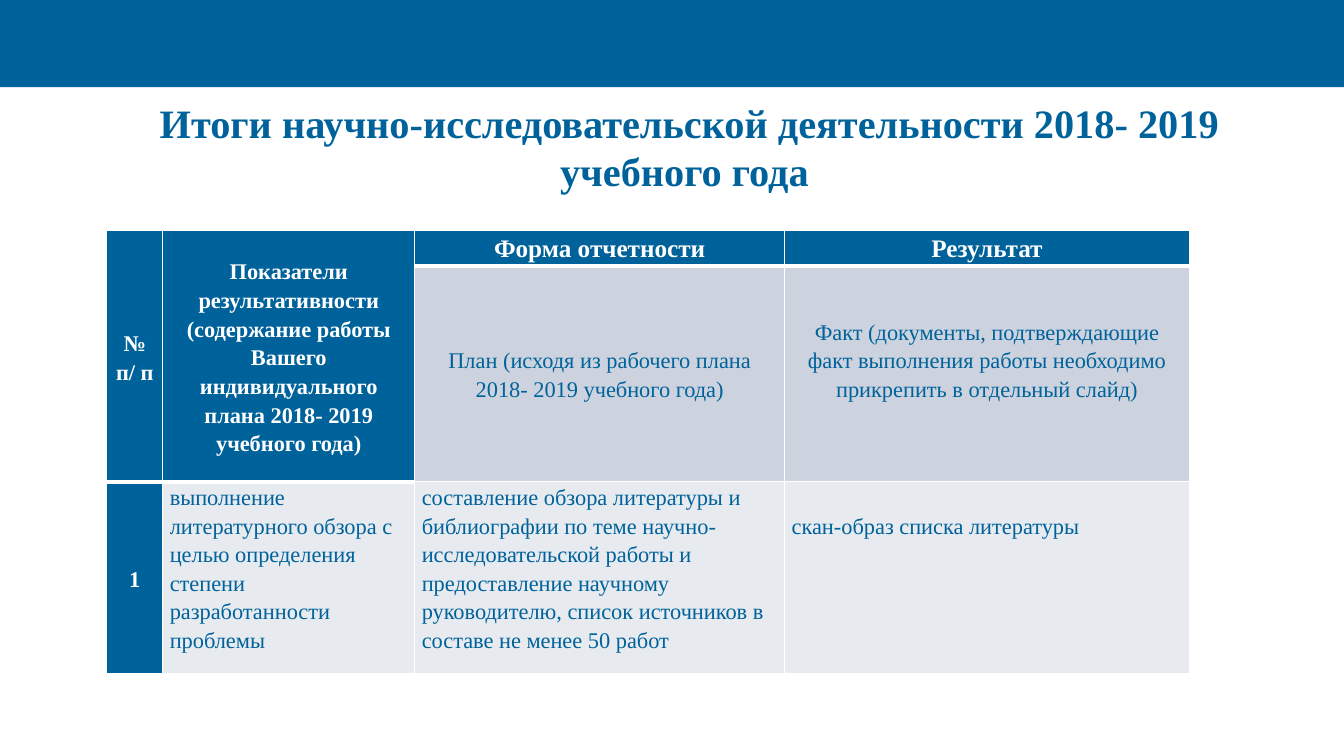
from dataclasses import dataclass
from typing import Optional

from lxml.etree import SubElement
from pptx import Presentation
from pptx.dml.color import RGBColor
from pptx.enum.shapes import MSO_SHAPE
from pptx.enum.text import MSO_ANCHOR, PP_ALIGN
from pptx.oxml.ns import qn
from pptx.slide import Slide
from pptx.table import _Cell
from pptx.text.text import _Paragraph
from pptx.util import Inches, Pt

GRID_STEP = 0.1
SLIDE_COLUMNS, SLIDE_ROWS = 133.33, 75


@dataclass(frozen=True)
class Theme:
    font: str = "Times New Roman"
    blue: str = "00629B"
    white: str = "FFFFFF"
    subheader: str = "CCD3DE"
    body: str = "E7EAEF"
    title_size: float = 28.8
    header_size: float = 18
    text_size: float = 16
    line_spacing: float = 1.15
    thin_rule: float = 1
    thick_rule: float = 3


THEME = Theme()


@dataclass(frozen=True)
class Look:
    fill: str
    color: str
    bold: bool
    size: float
    align: PP_ALIGN
    anchor: MSO_ANCHOR


@dataclass(frozen=True)
class Entry:
    row: int
    column: int
    paragraphs: tuple[str, ...]
    look: Look
    row_span: int = 1
    top_rule: float = THEME.thin_rule
    bottom_rule: float = THEME.thin_rule
    top_inset: float = 0
    bottom_inset: float = 0


HEADER = Look(THEME.blue, THEME.white, True, THEME.header_size, PP_ALIGN.CENTER, MSO_ANCHOR.TOP)
SIDE = Look(THEME.blue, THEME.white, True, THEME.text_size, PP_ALIGN.CENTER, MSO_ANCHOR.MIDDLE)
SUBHEADER = Look(THEME.subheader, THEME.blue, False, THEME.text_size, PP_ALIGN.CENTER, MSO_ANCHOR.MIDDLE)
BODY = Look(THEME.body, THEME.blue, False, THEME.text_size, PP_ALIGN.LEFT, MSO_ANCHOR.TOP)

THICK = THEME.thick_rule
SIDE_INSET = 0.7
LINE_INSET = 2.85
COLUMN_WIDTHS = (5.55, 25, 36.7, 40.15)
ROW_HEIGHTS = (3.3, 19.7, 19)

ENTRIES = (
    Entry(0, 0, ("№ п/ п",), SIDE, row_span=2, bottom_rule=THICK),
    Entry(0, 1, (
        "Показатели результативности",
        "(содержание работы Вашего индивидуального плана 2018- 2019 учебного года)",
    ), SIDE, row_span=2, bottom_rule=THICK),
    Entry(0, 2, ("Форма отчетности",), HEADER, bottom_rule=THICK),
    Entry(0, 3, ("Результат",), HEADER, bottom_rule=THICK),
    Entry(1, 2, ("План (исходя из рабочего плана 2018- 2019 учебного года)",),
          SUBHEADER, top_rule=THICK),
    Entry(1, 3, (
        "Факт (документы, подтверждающие факт выполнения работы "
        "необходимо прикрепить в отдельный слайд)",
    ), SUBHEADER, top_rule=THICK, bottom_inset=LINE_INSET),
    Entry(2, 0, ("1",), SIDE, top_rule=THICK),
    Entry(2, 1, (
        "выполнение литературного обзора с целью определения степени "
        "разработанности проблемы",
    ), BODY),
    Entry(2, 2, (
        "составление обзора литературы и библиографии по теме "
        "научно-исследовательской работы и предоставление научному "
        "руководителю, список источников в составе не менее 50 работ",
    ), BODY),
    Entry(2, 3, ("скан-образ списка литературы",), BODY, top_inset=LINE_INSET),
)


def grid(units: float) -> int:
    return Inches(units * GRID_STEP)


def write(paragraph: _Paragraph, text: str, size: float, color: str, bold: bool,
          align: PP_ALIGN, spacing: Optional[float] = None) -> None:
    paragraph.alignment = align
    if spacing is not None:
        paragraph.line_spacing = spacing
    run = paragraph.add_run()
    run.text = text
    run.font.name = THEME.font
    run.font.size = Pt(size)
    run.font.bold = bold
    run.font.color.rgb = RGBColor.from_string(color)


def draw_rules(cell: _Cell, top: float, bottom: float) -> None:
    properties = cell._tc.get_or_add_tcPr()
    widths = {"L": THEME.thin_rule, "R": THEME.thin_rule, "T": top, "B": bottom}
    for side, width in widths.items():
        rule = SubElement(properties, qn(f"a:ln{side}"), w=str(Pt(width)))
        paint = SubElement(rule, qn("a:solidFill"))
        SubElement(paint, qn("a:srgbClr"), val=THEME.white)


def style_cell(cell: _Cell, entry: Entry) -> None:
    draw_rules(cell, entry.top_rule, entry.bottom_rule)
    cell.fill.solid()
    cell.fill.fore_color.rgb = RGBColor.from_string(entry.look.fill)
    cell.vertical_anchor = entry.look.anchor
    cell.margin_left = cell.margin_right = grid(SIDE_INSET)
    cell.margin_top = grid(entry.top_inset)
    cell.margin_bottom = grid(entry.bottom_inset)


def draw_banner(slide: Slide) -> None:
    banner = slide.shapes.add_shape(MSO_SHAPE.RECTANGLE, 0, 0, grid(SLIDE_COLUMNS), grid(8.65))
    banner.shadow.inherit = False
    banner.fill.solid()
    banner.fill.fore_color.rgb = RGBColor.from_string(THEME.blue)
    banner.line.fill.background()


def draw_title(slide: Slide) -> None:
    title = slide.shapes.add_textbox(grid(8.4), grid(10), grid(120), grid(9))
    title.text_frame.word_wrap = True
    title.text_frame.vertical_anchor = MSO_ANCHOR.MIDDLE
    write(title.text_frame.paragraphs[0],
          "Итоги научно-исследовательской деятельности 2018- 2019 учебного года ",
          THEME.title_size, THEME.blue, True, PP_ALIGN.CENTER)


def draw_report(slide: Slide) -> None:
    report = slide.shapes.add_table(
        len(ROW_HEIGHTS), len(COLUMN_WIDTHS), grid(10.6), grid(22.9),
        grid(sum(COLUMN_WIDTHS)), grid(sum(ROW_HEIGHTS))).table
    report.first_row = False
    report.horz_banding = False
    for column, width in zip(report.columns, COLUMN_WIDTHS):
        column.width = grid(width)
    for row, height in zip(report.rows, ROW_HEIGHTS):
        row.height = grid(height)
    for entry in ENTRIES:
        cell = report.cell(entry.row, entry.column)
        last_row = entry.row + entry.row_span - 1
        if entry.row_span > 1:
            cell.merge(report.cell(last_row, entry.column))
        for row_index in range(entry.row, last_row + 1):
            style_cell(report.cell(row_index, entry.column), entry)
        for index, text in enumerate(entry.paragraphs):
            frame = cell.text_frame
            paragraph = frame.add_paragraph() if index else frame.paragraphs[0]
            look = entry.look
            write(paragraph, text, look.size, look.color, look.bold,
                  look.align, THEME.line_spacing)


def main() -> None:
    deck = Presentation()
    deck.slide_width = grid(SLIDE_COLUMNS)
    deck.slide_height = grid(SLIDE_ROWS)
    slide = deck.slides.add_slide(deck.slide_layouts[6])
    draw_banner(slide)
    draw_title(slide)
    draw_report(slide)
    deck.save("out.pptx")


if __name__ == "__main__":
    main()
